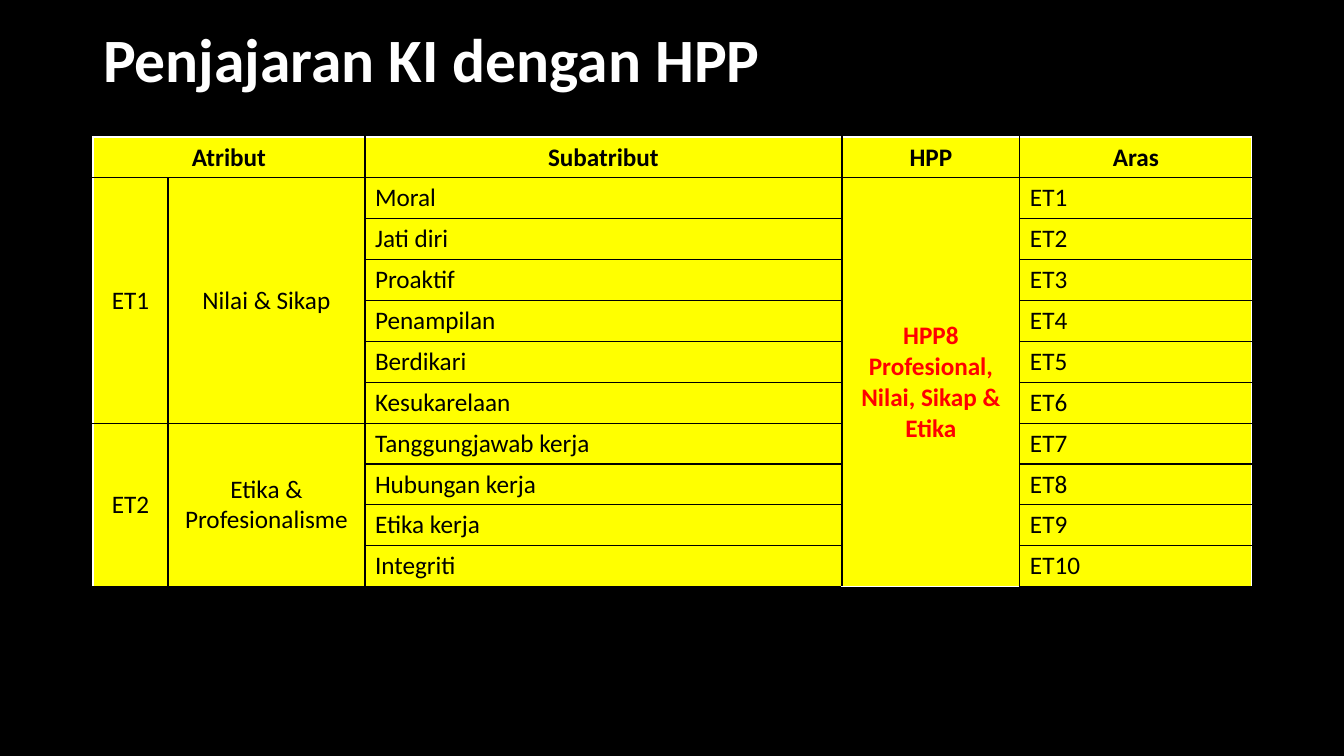
from lxml.etree import SubElement
from pptx import Presentation
from pptx.dml.color import RGBColor
from pptx.enum.text import MSO_ANCHOR as ANCHOR, PP_ALIGN as ALIGN
from pptx.oxml.ns import qn
from pptx.util import Emu, Pt

COLORS = {"black": "000000", "white": "FFFFFF", "yellow": "FFFF00", "red": "FF0000"}
FONT = "Calibri"
ROW_HEIGHT = 39
COLUMN_WIDTHS = [75, 197, 477, 178, 232]
ID, ATTRIBUTE, SUBATTRIBUTE, HPP, LEVEL = range(5)

HEADINGS = {ID: "Atribut", SUBATTRIBUTE: "Subatribut", HPP: "HPP", LEVEL: "Aras"}
ATTRIBUTES = [
    ("ET1", "Nilai & Sikap",
     ["Moral", "Jati diri", "Proaktif", "Penampilan", "Berdikari", "Kesukarelaan"]),
    ("ET2", "Etika & Profesionalisme",
     ["Tanggungjawab kerja", "Hubungan kerja", "Etika kerja", "Integriti"]),
]


def px(length):
    return Emu(round(length * 914400 / 100.8))


def rgb(name):
    return RGBColor.from_string(COLORS[name])


prs = Presentation()
prs.slide_width, prs.slide_height = px(1344), px(756)
slide = prs.slides.add_slide(prs.slide_layouts[5])
slide.background.fill.solid()
slide.background.fill.fore_color.rgb = rgb("black")

# Title
title = slide.shapes.title
title.left, title.top, title.width, title.height = px(93), px(15), px(1159), px(95)
title.text_frame.text = "Penjajaran KI dengan HPP"
title.text_frame.vertical_anchor = ANCHOR.MIDDLE
heading = title.text_frame.paragraphs[0]
heading.alignment = ALIGN.LEFT
heading.line_spacing = 0.9
heading.font.name, heading.font.size, heading.font.bold = FONT, Pt(44), True
heading.font.color.rgb = rgb("white")

# Table grid
row_count = 1 + sum(len(subattributes) for _, _, subattributes in ATTRIBUTES)
last_row = row_count - 1
alignment = slide.shapes.add_table(
    row_count, len(COLUMN_WIDTHS), px(93), px(137),
    px(sum(COLUMN_WIDTHS)), px(ROW_HEIGHT * row_count)).table
alignment.first_row = alignment.horz_banding = False
for column, width in zip(alignment.columns, COLUMN_WIDTHS):
    column.width = px(width)
for row in alignment.rows:
    row.height = px(ROW_HEIGHT)

# Wording and merged cells
for column, label in HEADINGS.items():
    alignment.cell(0, column).text = label
alignment.cell(0, ID).merge(alignment.cell(0, ATTRIBUTE))
alignment.cell(1, HPP).text = "HPP8\nProfesional, Nilai, Sikap & Etika"
alignment.cell(1, HPP).merge(alignment.cell(last_row, HPP))

first = 1
for code, attribute, subattributes in ATTRIBUTES:
    last = first + len(subattributes) - 1
    for column, label in ((ID, code), (ATTRIBUTE, attribute)):
        alignment.cell(first, column).text = label
        alignment.cell(first, column).merge(alignment.cell(last, column))
    for r, subattribute in enumerate(subattributes, first):
        alignment.cell(r, SUBATTRIBUTE).text = subattribute
        alignment.cell(r, LEVEL).text = f"ET{r}"
    first = last + 1

# Borders, fills and text formatting
for r in range(row_count):
    for c in range(len(COLUMN_WIDTHS)):
        cell = alignment.cell(r, c)
        is_header, is_hpp = r == 0, r > 0 and c == HPP
        white_edges = {"lnL": c == ID, "lnR": c == LEVEL, "lnT": is_header, "lnB": is_hpp}
        properties = cell._tc.get_or_add_tcPr()
        for edge, is_white in white_edges.items():
            line = SubElement(properties, qn(f"a:{edge}"), w=str(Pt(1)))
            paint = SubElement(line, qn("a:solidFill"))
            SubElement(paint, qn("a:srgbClr"), val=COLORS["white" if is_white else "black"])
        cell.fill.solid()
        cell.fill.fore_color.rgb = rgb("yellow")
        is_list = not is_header and c in (SUBATTRIBUTE, LEVEL)
        cell.vertical_anchor = ANCHOR.TOP if is_header or is_list else ANCHOR.MIDDLE
        for paragraph in cell.text_frame.paragraphs:
            paragraph.alignment = ALIGN.LEFT if is_list else ALIGN.CENTER
            paragraph.font.name, paragraph.font.size = FONT, Pt(18)
            paragraph.font.bold = is_header or is_hpp
            paragraph.font.color.rgb = rgb("red" if is_hpp else "black")

prs.save("out.pptx")
